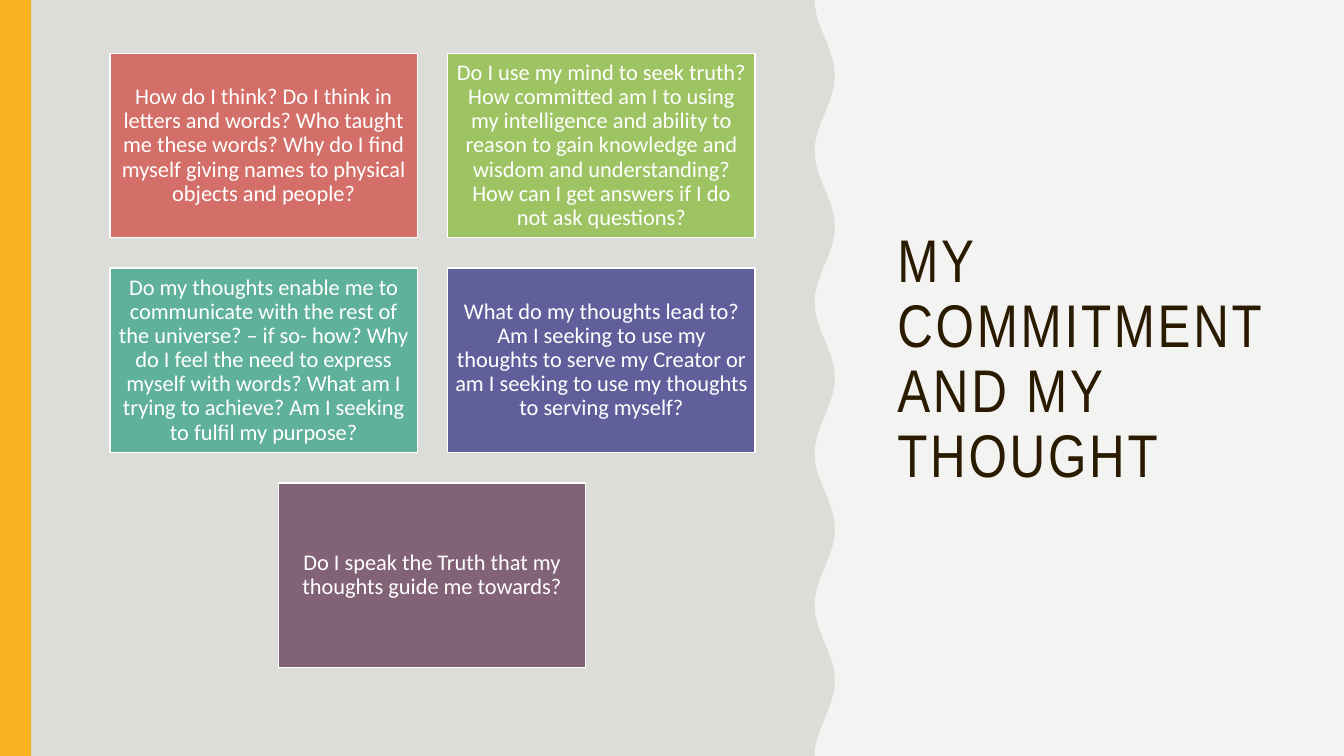
import dataclasses
import math

import pptx
import pptx.dml.color
import pptx.enum.shapes
import pptx.enum.text
import pptx.util

PX = 9144  # EMU per px, 100 px to the inch
SLIDE_W, SLIDE_H = 1333, 750
CARD_W, CARD_H, CARD_GAP = 305, 183, 30
CARDS_LEFT, CARDS_TOP = 109, 53
WAVE_MID, WAVE_DEPTH, WAVE_PERIOD, WAVE_STEP = 818, 10, 150, 5

ALIGN = pptx.enum.text.PP_ALIGN
TEXT_FRAME = {
    "word_wrap": True,
    "auto_size": pptx.enum.text.MSO_AUTO_SIZE.NONE,
    "vertical_anchor": pptx.enum.text.MSO_ANCHOR.MIDDLE,
}
CARD_MARGINS = {f"margin_{side}": 7 * PX for side in ("left", "top", "right", "bottom")}


@dataclasses.dataclass
class Card:
    column: float
    row: int
    fill: str
    text: str


CARDS = [
    Card(0, 0, "D36F68",
         "How do I think? Do I think in letters and words? Who taught me these words? "
         "Why do I find myself giving names to physical objects and people?"),
    Card(1, 0, "9DC362",
         "Do I use my mind to seek truth? How committed am I to using my intelligence "
         "and ability to reason to gain knowledge and wisdom and understanding? "
         "How can I get answers if I do not ask questions?"),
    Card(0, 1, "5FB19A",
         "Do my thoughts enable me to communicate with the rest of the universe? "
         "– if so- how? Why do I feel the need to express myself with words? "
         "What am I trying to achieve? Am I seeking to fulfil my purpose?"),
    Card(1, 1, "615F9B",
         "What do my thoughts lead to? Am I seeking to use my thoughts to serve my "
         "Creator or am I seeking to use my thoughts to serving myself?"),
    Card(0.5, 2, "826276",
         "Do I speak the Truth that my thoughts guide me towards?"),
]


def px(length: float) -> int:
    return round(length * PX)


def rgb(color: str) -> pptx.dml.color.RGBColor:
    return pptx.dml.color.RGBColor.from_string(color)


def set_all(target, values: dict) -> None:
    for name, value in values.items():
        setattr(target, name, value)


def paint(s, fill: str, line: str = "") -> None:
    s.shadow.inherit = False
    s.fill.solid()
    s.fill.fore_color.rgb = rgb(fill)
    if line:
        s.line.color.rgb = rgb(line)
        s.line.width = pptx.util.Pt(1)
    else:
        s.line.fill.background()


def add_rect(slide, left: int, top: int, width: int, height: int):
    return slide.shapes.add_shape(
        pptx.enum.shapes.MSO_SHAPE.RECTANGLE, px(left), px(top), px(width), px(height))


def write(s, text: str, align: ALIGN, font: str, size: int, color: str):
    tf = s.text_frame
    set_all(tf, TEXT_FRAME)
    p = tf.paragraphs[0]
    set_all(p, {"alignment": align, "line_spacing": 0.9})
    r = p.add_run()
    r.text = text
    set_all(r.font, {"name": font, "size": pptx.util.Pt(size)})
    r.font.color.rgb = rgb(color)
    return r


def add_title(slide) -> None:
    s = slide.shapes.title
    set_all(s, {"left": px(880), "top": px(53), "width": px(400), "height": px(609)})
    r = write(s, "MY COMMITMENT AND MY THOUGHT", ALIGN.LEFT, "Arial Narrow", 43, "2A1A00")
    r.font._element.set("spc", "200")


def add_wavy_panel(slide) -> None:
    edge = [
        (px(WAVE_MID - WAVE_DEPTH * math.cos(math.tau * y / WAVE_PERIOD)), px(y))
        for y in range(0, SLIDE_H + 1, WAVE_STEP)
    ]
    builder = slide.shapes.build_freeform(0, 0)
    builder.add_line_segments(edge + [(0, px(SLIDE_H))], close=True)
    paint(builder.convert_to_shape(), "DCDCD9")


def add_card(slide, card: Card) -> None:
    left = round(CARDS_LEFT + card.column * (CARD_W + CARD_GAP))
    top = CARDS_TOP + card.row * (CARD_H + CARD_GAP)
    s = add_rect(slide, left, top, CARD_W, CARD_H)
    paint(s, card.fill, "FFFFFF")
    set_all(s.text_frame, CARD_MARGINS)
    write(s, card.text, ALIGN.CENTER, "Calibri", 16, "FFFFFF")


def main() -> None:
    prs = pptx.Presentation()
    set_all(prs, {"slide_width": px(SLIDE_W), "slide_height": px(SLIDE_H)})
    slide = prs.slides.add_slide(prs.slide_layouts.get_by_name("Title Only"))
    slide.background.fill.solid()
    slide.background.fill.fore_color.rgb = rgb("F3F3F2")

    add_title(slide)
    add_wavy_panel(slide)
    paint(add_rect(slide, 0, 0, 31, SLIDE_H), "F8B323")
    for card in CARDS:
        add_card(slide, card)
    prs.save("out.pptx")


if __name__ == "__main__":
    main()
